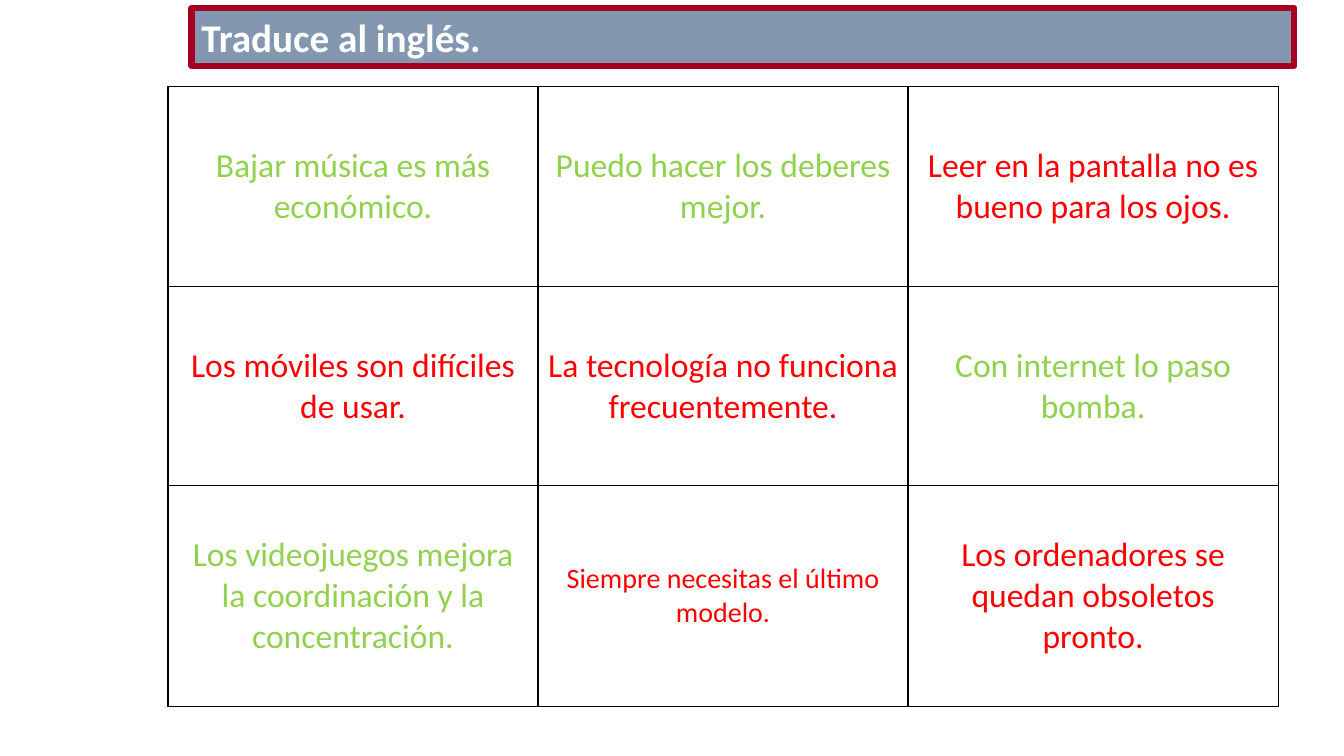
from dataclasses import dataclass

from lxml.etree import SubElement
from pptx import Presentation
from pptx.dml.color import RGBColor
from pptx.enum.shapes import MSO_SHAPE as Preset
from pptx.enum.text import MSO_ANCHOR as Anchor, MSO_AUTO_SIZE as AutoSize, PP_ALIGN as Align
from pptx.oxml.ns import qn
from pptx.util import Inches, Pt

SLIDE_WIDTH, SLIDE_HEIGHT = Inches(13.33), Inches(7.5)
GREEN, RED, BLACK, WHITE = "92D050", "FF0000", "000000", "FFFFFF"
BANNER_FILL, BANNER_EDGE = "8497B0", "A50021"
COLUMNS = 3
ROW_SHARES = (26.4, 26.4, 29.2)  # percent of slide height


@dataclass(frozen=True)
class Area:
    """A region in percent of the slide's width and height."""
    left: float
    top: float
    width: float
    height: float

    def box(self) -> tuple[int, int, int, int]:
        return (across(self.left), down(self.top), across(self.width), down(self.height))


@dataclass(frozen=True)
class Phrase:
    text: str
    color: str
    size: int = 24


PHRASES = (
    Phrase("Bajar música es más económico.", GREEN),
    Phrase("Puedo hacer los deberes mejor.", GREEN),
    Phrase("Leer en la pantalla no es bueno para los ojos.", RED),
    Phrase("Los móviles son difíciles de usar.", RED),
    Phrase("La tecnología no funciona frecuentemente.", RED),
    Phrase("Con internet lo paso bomba.", GREEN),
    Phrase("Los videojuegos mejora la coordinación y la concentración.", GREEN),
    Phrase("Siempre necesitas el último modelo.", RED, 20),
    Phrase("Los ordenadores se quedan obsoletos pronto.", RED),
)
BANNER_AREA = Area(14.25, 1.07, 82.05, 7.65)
GRID_AREA = Area(12.5, 11.47, 82.6, sum(ROW_SHARES))


def across(percent: float) -> int:
    return round(SLIDE_WIDTH * percent / 100)


def down(percent: float) -> int:
    return round(SLIDE_HEIGHT * percent / 100)


def rgb(color: str) -> RGBColor:
    return RGBColor.from_string(color)


def write(paragraph, phrase: Phrase, align: Align, bold: bool = False) -> None:
    paragraph.alignment = align
    run = paragraph.add_run()
    run.text = phrase.text
    font_format = {"name": "Calibri", "size": Pt(phrase.size), "bold": bold}
    for attribute, value in font_format.items():
        setattr(run.font, attribute, value)
    run.font.color.rgb = rgb(phrase.color)


def outline_cell(cell, color: str, width: Pt) -> None:
    properties = cell._tc.get_or_add_tcPr()
    for position, side in enumerate(("a:lnL", "a:lnR", "a:lnT", "a:lnB")):
        border = SubElement(properties, qn(side), w=str(width))
        fill = SubElement(border, qn("a:solidFill"))
        SubElement(fill, qn("a:srgbClr"), val=color)
        properties.insert(position, border)


def draw_grid(slide, area: Area) -> None:
    grid = slide.shapes.add_table(len(ROW_SHARES), COLUMNS, *area.box()).table
    for flag in ("first_row", "horz_banding"):
        setattr(grid, flag, False)
    for row, share in zip(grid.rows, ROW_SHARES):
        row.height = down(share)
    for cell, phrase in zip(grid.iter_cells(), PHRASES):
        cell.fill.background()
        cell.vertical_anchor = Anchor.MIDDLE
        outline_cell(cell, BLACK, Pt(1))
        write(cell.text_frame.paragraphs[0], phrase, Align.CENTER)


def draw_banner(slide, area: Area, heading: Phrase) -> None:
    banner = slide.shapes.add_shape(Preset.RECTANGLE, *area.box())
    banner.shadow.inherit = False
    banner.fill.solid()
    banner.fill.fore_color.rgb = rgb(BANNER_FILL)
    banner.line.color.rgb = rgb(BANNER_EDGE)
    banner.line.width = Pt(4.5)
    frame_format = {
        "word_wrap": True,
        "auto_size": AutoSize.SHAPE_TO_FIT_TEXT,
        "vertical_anchor": Anchor.TOP,
    }
    for attribute, value in frame_format.items():
        setattr(banner.text_frame, attribute, value)
    write(banner.text_frame.paragraphs[0], heading, Align.LEFT, bold=True)


def main() -> None:
    deck = Presentation()
    deck.slide_width, deck.slide_height = SLIDE_WIDTH, SLIDE_HEIGHT
    slide = deck.slides.add_slide(deck.slide_layouts[6])
    # Phrases to translate
    draw_grid(slide, GRID_AREA)
    # Task heading
    draw_banner(slide, BANNER_AREA, Phrase("Traduce al inglés.", WHITE, 28))
    deck.save("out.pptx")


if __name__ == "__main__":
    main()
